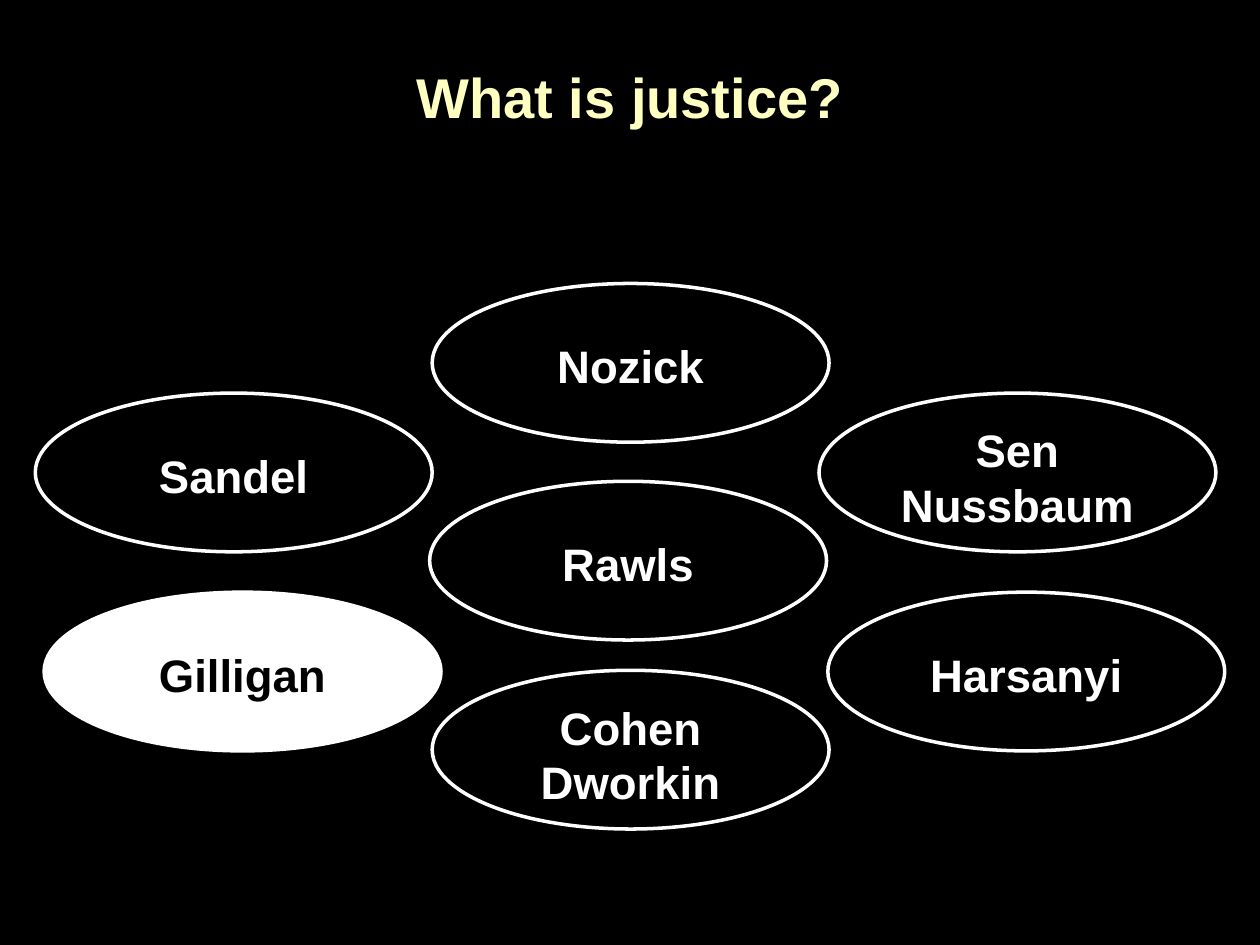
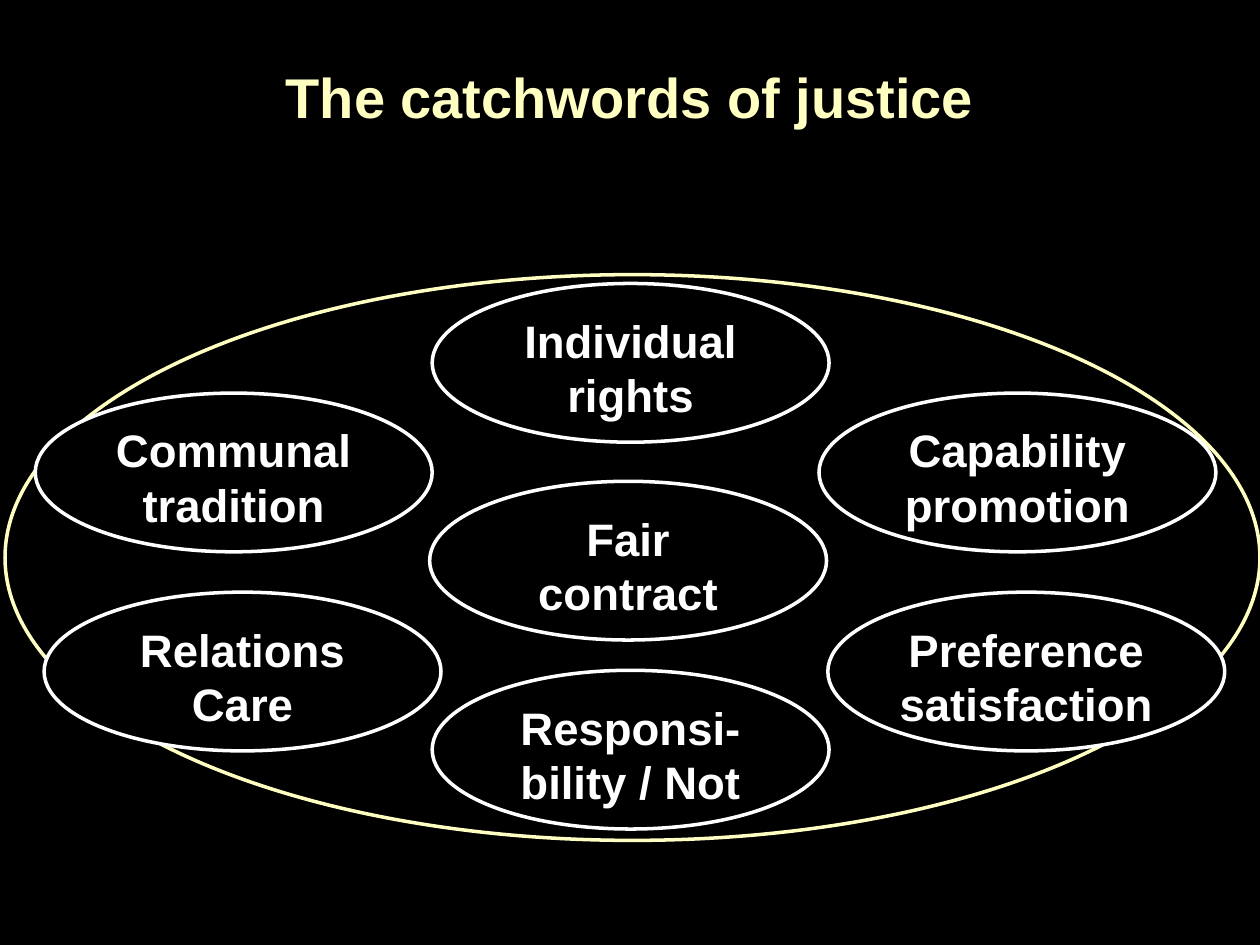
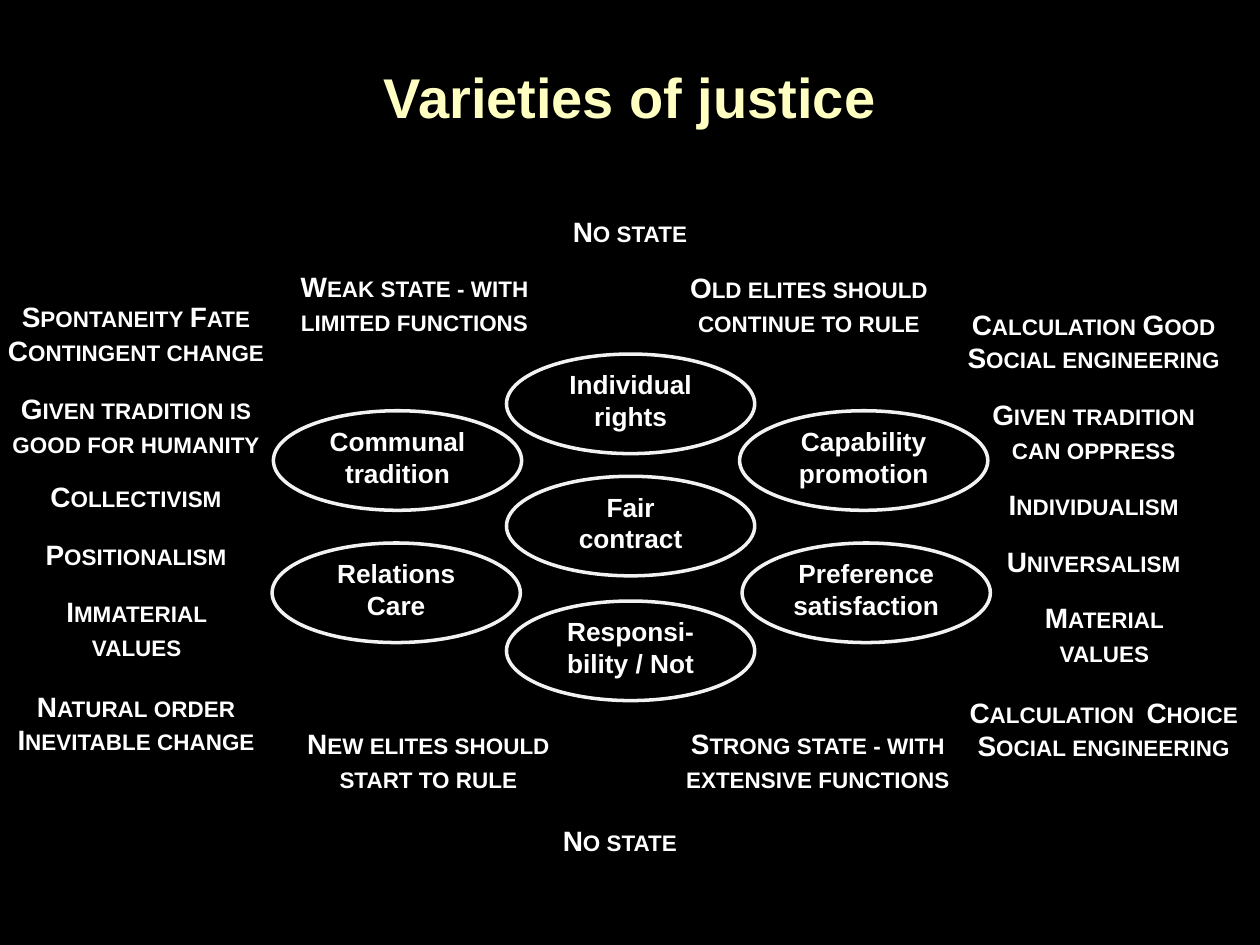
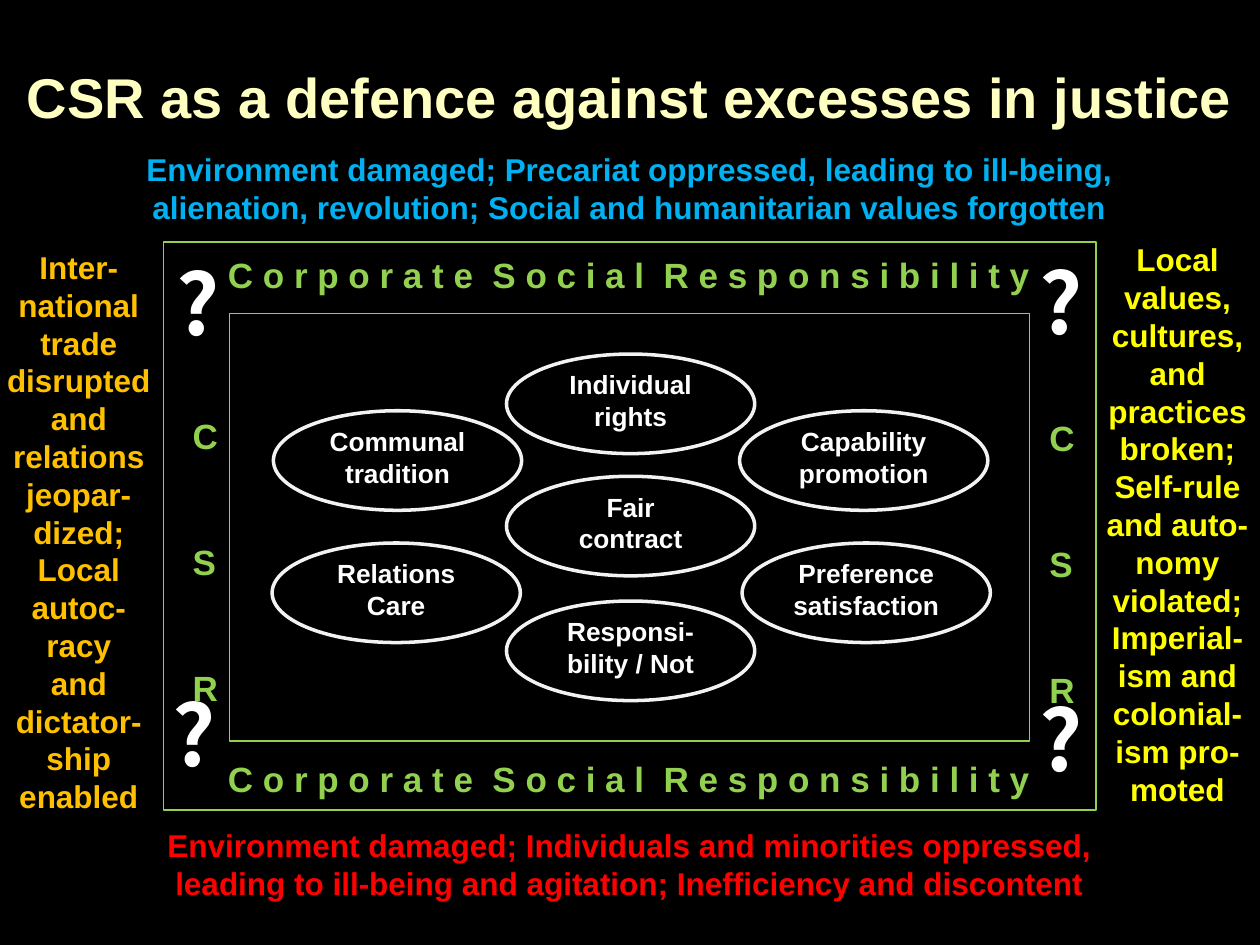
from lxml import etree
from pptx import Presentation
from pptx.dml.color import RGBColor
from pptx.enum.shapes import MSO_SHAPE
from pptx.enum.text import MSO_ANCHOR, MSO_AUTO_SIZE, PP_ALIGN
from pptx.oxml.ns import qn
from pptx.util import Emu, Pt

OVAL, RECTANGLE = MSO_SHAPE.OVAL, MSO_SHAPE.RECTANGLE
TOP, MIDDLE = MSO_ANCHOR.TOP, MSO_ANCHOR.MIDDLE
LEFT, CENTER = PP_ALIGN.LEFT, PP_ALIGN.CENTER
FIT_SHAPE = MSO_AUTO_SIZE.SHAPE_TO_FIT_TEXT
TITLE_ONLY = 5

PX = 9144  # 100 px to the inch
FONT, MARK_FONT = "Arial", "Noto Sans CJK SC"
BLACK, WHITE, CREAM, GREEN = "000000", "FFFFFF", "FFFFC2", "92D050"
BLUE, YELLOW, RED, ORANGE = "00B0F0", "FFFF00", "FF0000", "FFC000"

LARGE_OVAL, SMALL_OVAL = (315, 126), (197, 79)
# Left and top of each oval: large on the first two slides, small on the others
LARGE_PLACES = {
    "bottom": (343, 532), "centre": (341, 382), "top": (343, 225),
    "upper left": (28, 312), "upper right": (650, 312),
    "lower left": (35, 470), "lower right": (657, 470),
}
SMALL_PLACES = {
    "bottom": (402, 477), "centre": (402, 378), "top": (402, 281),
    "upper left": (217, 326), "upper right": (587, 326),
    "lower left": (216, 431), "lower right": (589, 431),
}
THINKERS = {
    "bottom": ["Cohen", "Dworkin"], "centre": ["Rawls"], "top": ["Nozick"],
    "upper left": ["Sandel"], "upper right": ["Sen", "Nussbaum"],
    "lower left": ["Gilligan"], "lower right": ["Harsanyi"],
}
CATCHWORDS = {
    "bottom": "Responsi-bility / Not", "centre": "Fair contract",
    "top": "Individual rights", "upper left": "Communal tradition",
    "upper right": "Capability promotion", "lower left": "Relations Care",
    "lower right": "Preference satisfaction",
}

ONE_LINE, TWO_LINES = 37, 64
# Left, top, width, height and paragraphs of each political attitude
ATTITUDES = [
    (388, 165, 224, ONE_LINE, ["No state"]),
    (217, 209, 224, TWO_LINES, ["Weak state - with limited functions"]),
    (530, 210, 224, TWO_LINES, ["Old elites should continue to rule"]),
    (-4, 233, 224, TWO_LINES, ["Spontaneity Fate", "Contingent change"]),
    (-4, 306, 224, TWO_LINES, ["Given tradition is good for humanity"]),
    (-4, 376, 224, ONE_LINE, ["Collectivism"]),
    (-4, 422, 224, ONE_LINE, ["Positionalism"]),
    (16, 467, 185, TWO_LINES, ["Immaterial values"]),
    (-4, 542, 224, TWO_LINES, ["Natural order", "Inevitable change"]),
    (756, 239, 224, TWO_LINES, ["Calculation Good", "Social engineering"]),
    (756, 311, 224, TWO_LINES, ["Given tradition can oppress"]),
    (756, 382, 224, ONE_LINE, ["Individualism"]),
    (756, 427, 224, ONE_LINE, ["Universalism"]),
    (784, 472, 185, TWO_LINES, ["Material values"]),
    (756, 547, 240, TWO_LINES, ["Calculation  Choice Social engineering"]),
    (228, 572, 224, TWO_LINES, ["New elites should start to rule"]),
    (530, 572, 238, TWO_LINES, ["Strong state - with extensive functions"]),
    (380, 649, 224, ONE_LINE, ["No state"]),
]

CSR_BANNER = "C o r p o r a t e  S o c i a l  R e s p o n s i b i l i t y"
# Left, top, width, height, colour and paragraphs of each excess
EXCESSES = [
    (102, 114, 795, 71, BLUE,
     ["Environment damaged; Precariat oppressed, leading to ill-being, "
      "alienation, revolution; Social and humanitarian values forgotten"]),
    (867, 186, 135, 464, YELLOW,
     ["Local values,", "cultures, and practices broken;",
      "Self-rule and auto-nomy violated; Imperial-ism and colonial-ism "
      "pro-moted"]),
    (102, 651, 795, 71, RED,
     ["Environment damaged; Individuals and minorities oppressed, leading to "
      "ill-being and agitation; Inefficiency and discontent"]),
    (-5, 192, 135, 464, ORANGE,
     ["Inter-national trade disrupted and relations jeopar-dized; Local "
      "autoc-racy", "and dictator-ship enabled"]),
]
QUESTION_MARKS = [(815, 194), (130, 195), (127, 537), (815, 541)]


def rgb(colour):
    return RGBColor.from_string(colour)


def box(left, top, width, height):
    return [Emu(length * PX) for length in (left, top, width, height)]


def write(shape, paragraphs, size, colour=WHITE, font=FONT, align=CENTER,
          anchor=TOP, gap=0, small_caps=False):
    """Fill the shape with bold paragraphs, gap points apart."""
    frame = shape.text_frame
    frame.word_wrap = True
    frame.vertical_anchor = anchor
    for index, text in enumerate(paragraphs):
        paragraph = frame.add_paragraph() if index else frame.paragraphs[0]
        paragraph.alignment = align
        paragraph.space_before = Pt(gap if index else 0)
        run = paragraph.add_run()
        run.text = text
        run.font.name, run.font.size, run.font.bold = font, Pt(size), True
        run.font.color.rgb = rgb(colour)
        if small_caps:
            run._r.get_or_add_rPr().set("cap", "small")


def add_label(slide, place, paragraphs, size, **text_format):
    label = slide.shapes.add_textbox(*box(*place))
    write(label, paragraphs, size, **text_format)
    label.text_frame.auto_size = FIT_SHAPE


def add_outline(slide, kind, place, line=WHITE, width=2, fill=BLACK, opacity=100):
    outline = slide.shapes.add_shape(kind, *box(*place))
    outline.shadow.inherit = False
    outline.fill.solid()
    outline.fill.fore_color.rgb = rgb(fill)
    outline.line.color.rgb = rgb(line)
    outline.line.width = Pt(width)
    if opacity < 100:
        line_colour = outline.line._ln.find(".//" + qn("a:srgbClr"))
        etree.SubElement(line_colour, qn("a:alpha"), val=str(opacity * 1000))
    return outline


def add_thinkers(slide):
    for position, names in THINKERS.items():
        highlighted = position == "lower left"
        oval = add_outline(slide, OVAL, LARGE_PLACES[position] + LARGE_OVAL,
                           fill=WHITE if highlighted else BLACK)
        write(oval, names, 26, BLACK if highlighted else WHITE)
        if len(names) == 1:
            oval.text_frame.margin_top = Emu(25 * PX)


def add_large_catchwords(slide):
    for position, catchword in CATCHWORDS.items():
        oval = add_outline(slide, OVAL, LARGE_PLACES[position] + LARGE_OVAL)
        write(oval, [catchword], 26)


def add_small_catchwords(slide):
    for position, catchword in CATCHWORDS.items():
        oval = add_outline(slide, OVAL, SMALL_PLACES[position] + SMALL_OVAL,
                           opacity=94)
        write(oval, [catchword], 15)
        oval.text_frame.margin_top = oval.text_frame.margin_bottom = 0


def add_csr_frame(slide):
    for place in [(130, 192, 740, 451), (182, 249, 635, 339)]:
        add_outline(slide, RECTANGLE, place, line=GREEN, width=0.75)
    for top in (196, 596):
        add_label(slide, (161, top, 677, 44), [CSR_BANNER], 20, colour=GREEN)
    for left, top in [(143, 324), (823, 326)]:
        add_label(slide, (left, top, 37, 178), list("CSR"), 20, colour=GREEN,
                  gap=48)
    for left, top in QUESTION_MARKS:
        add_label(slide, (left, top, 31, 91), ["?"], 48, font=MARK_FONT,
                  align=LEFT)


def add_titled_slide(deck, title):
    slide = deck.slides.add_slide(deck.slide_layouts[TITLE_ONLY])
    heading = slide.shapes.title
    heading.left, heading.top, heading.width, heading.height = box(0, 14, 1000, 125)
    write(heading, [title], 32, CREAM, anchor=MIDDLE)
    return slide


def main():
    deck = Presentation()
    deck.slide_width, deck.slide_height = Emu(1000 * PX), Emu(750 * PX)
    background = deck.slide_master.background.fill
    background.solid()
    background.fore_color.rgb = rgb(BLACK)

    add_thinkers(add_titled_slide(deck, "What is justice?"))

    catchwords = add_titled_slide(deck, "The catchwords of justice")
    add_outline(catchwords, OVAL, (4, 218, 996, 449), line=CREAM)
    add_large_catchwords(catchwords)

    varieties = add_titled_slide(deck, "Varieties of justice")
    add_small_catchwords(varieties)
    for *place, attitude in ATTITUDES:
        add_label(varieties, place, attitude, 16, small_caps=True)

    defence = add_titled_slide(deck, "CSR as a defence against excesses in justice")
    add_csr_frame(defence)
    add_small_catchwords(defence)
    for *place, colour, excess in EXCESSES:
        add_label(defence, place, excess, 18, colour=colour)

    deck.save("out.pptx")


if __name__ == "__main__":
    main()
